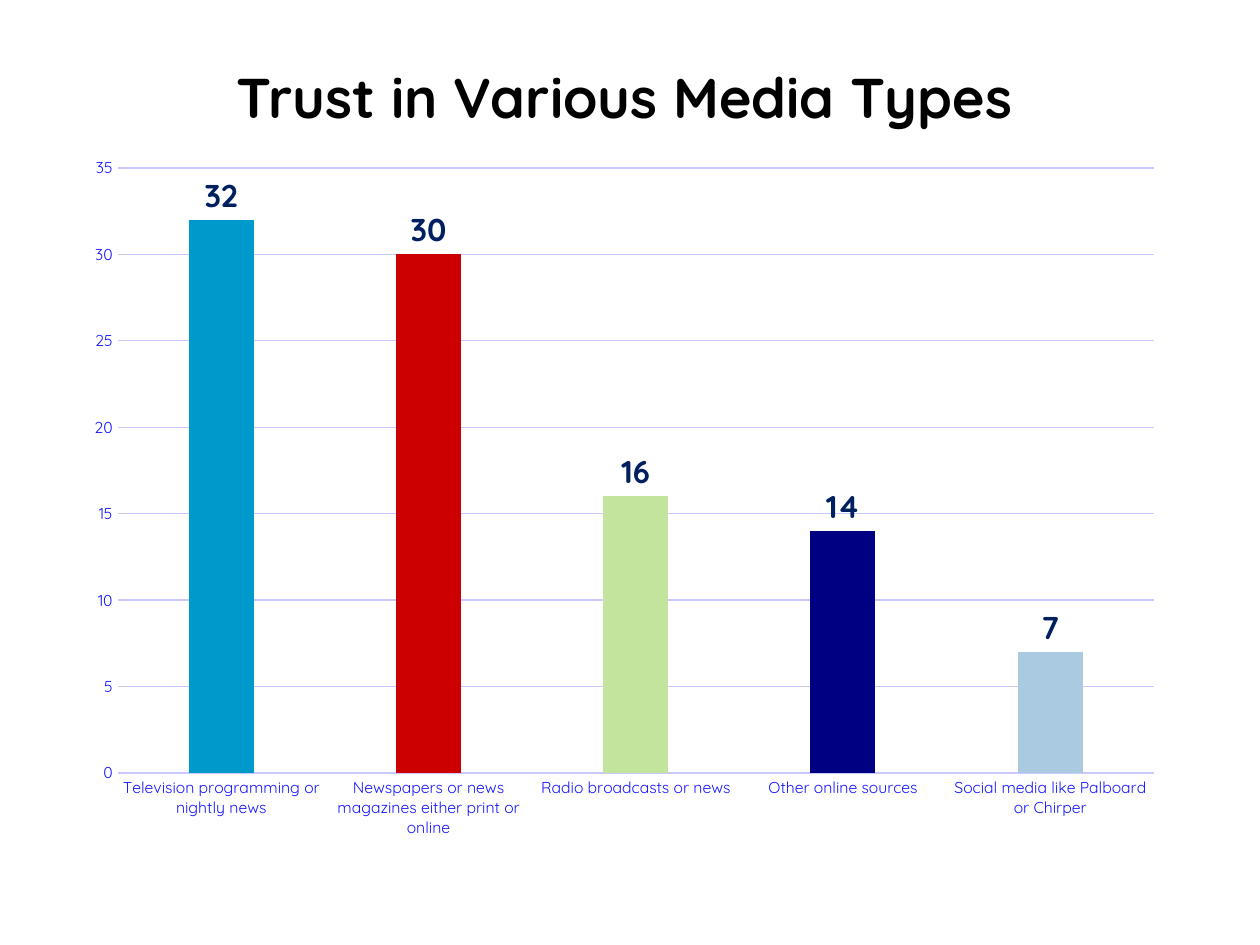
from pptx import Presentation
from pptx.chart.data import CategoryChartData as ChartData
from pptx.dml.color import RGBColor
from pptx.enum.chart import XL_CHART_TYPE as ChartType
from pptx.enum.chart import XL_LABEL_POSITION as LabelPosition
from pptx.enum.chart import XL_TICK_MARK as TickMark
from pptx.enum.text import MSO_ANCHOR as Anchor
from pptx.enum.text import PP_ALIGN as Align
from pptx.oxml import parse_xml
from pptx.oxml.ns import nsdecls
from pptx.util import Pt

PX = 9525
BLACK = RGBColor(0x00, 0x00, 0x00)
NAVY = RGBColor(0x00, 0x20, 0x60)
DEEP_BLUE = RGBColor(0x00, 0x00, 0x99)
AXIS_BLUE = RGBColor(0x17, 0x17, 0xFF)
GRID_BLUE = RGBColor(0xC9, 0xC9, 0xFF)
SKY = RGBColor(0x00, 0x99, 0xCC)
RED = RGBColor(0xCC, 0x00, 0x00)
GREEN = RGBColor(0xC2, 0xE4, 0x9C)
DARK_BLUE = RGBColor(0x00, 0x00, 0x82)
PALE_BLUE = RGBColor(0xAA, 0xCA, 0xE2)

MEDIA_TRUST = [
    ("Television programming or nightly news", 32, SKY),
    ("Newspapers or news magazines either print or online", 30, RED),
    ("Radio broadcasts or news", 16, GREEN),
    ("Other online sources", 14, DARK_BLUE),
    ("Social media like Palboard or Chirper", 7, PALE_BLUE),
]
PLOT_LAYOUT = {"x": 0.04, "y": 0.03, "w": 0.94, "h": 0.86}


class PageBuilder:
    typeface = "Quicksand"

    def __init__(self, page):
        self.page = page

    def style_font(self, font, size, color, bold=False):
        font.name = self.typeface
        font.size = Pt(size)
        font.bold = bold
        font.color.rgb = color

    def style_line(self, line):
        line.color.rgb = GRID_BLUE
        line.width = Pt(0.75)

    def title(self, text, left, top, width, height):
        box = self.page.shapes.title
        box.left, box.top, box.width, box.height = (
            length * PX for length in (left, top, width, height))
        frame = box.text_frame
        frame.text = text
        frame.word_wrap = True
        frame.vertical_anchor = Anchor.BOTTOM
        para = frame.paragraphs[0]
        para.alignment = Align.CENTER
        self.style_font(para.runs[0].font, 32, BLACK, bold=True)

    def axis(self, axis):
        axis.major_tick_mark = TickMark.NONE
        axis.minor_tick_mark = TickMark.NONE
        self.style_font(axis.tick_labels.font, 9, AXIS_BLUE)

    def plot_layout(self, chart):
        area = chart.element.xpath("c:chart/c:plotArea")[0]
        for layout in area.xpath("c:layout"):
            area.remove(layout)
        modes = "".join(f'<c:{key}Mode val="edge"/>' for key in "xy")
        sizes = "".join(
            f'<c:{key} val="{value}"/>' for key, value in PLOT_LAYOUT.items())
        area.insert(0, parse_xml(
            f'<c:layout {nsdecls("c")}><c:manualLayout>'
            f'<c:layoutTarget val="inner"/>{modes}{sizes}'
            '</c:manualLayout></c:layout>'))

    def column_chart(self, rows, left, top, width, height):
        names, values, colors = zip(*rows)
        data = ChartData()
        data.categories = names
        data.add_series("Series 1", values)
        chart = self.page.shapes.add_chart(
            ChartType.COLUMN_CLUSTERED,
            left * PX, top * PX, width * PX, height * PX, data).chart
        chart.has_title = False
        chart.has_legend = False
        self.style_font(chart.font, 10, DEEP_BLUE)

        self.axis(chart.category_axis)
        self.style_line(chart.category_axis.format.line)
        scale = chart.value_axis
        self.axis(scale)
        scale.minimum_scale, scale.maximum_scale, scale.major_unit = 0, 35, 5
        scale.format.line.fill.background()
        self.style_line(scale.major_gridlines.format.line)

        plot = chart.plots[0]
        plot.gap_width = 219
        plot.overlap = -27
        plot.vary_by_categories = False
        plot.has_data_labels = True
        labels = plot.data_labels
        labels.show_value = True
        labels.position = LabelPosition.OUTSIDE_END
        self.style_font(labels.font, 18, NAVY, bold=True)
        for index, color in enumerate(colors):
            fill = plot.series[0].points[index].format.fill
            fill.solid()
            fill.fore_color.rgb = color
        self.plot_layout(chart)


def main():
    deck = Presentation()
    deck.slide_width = 960 * PX
    deck.slide_height = 720 * PX
    builder = PageBuilder(deck.slides.add_slide(deck.slide_layouts[5]))
    builder.title("Trust in Various Media Types", 56, 40, 840, 64)
    builder.column_chart(MEDIA_TRUST, 56, 112, 840, 536)
    deck.save("out.pptx")


if __name__ == "__main__":
    main()
